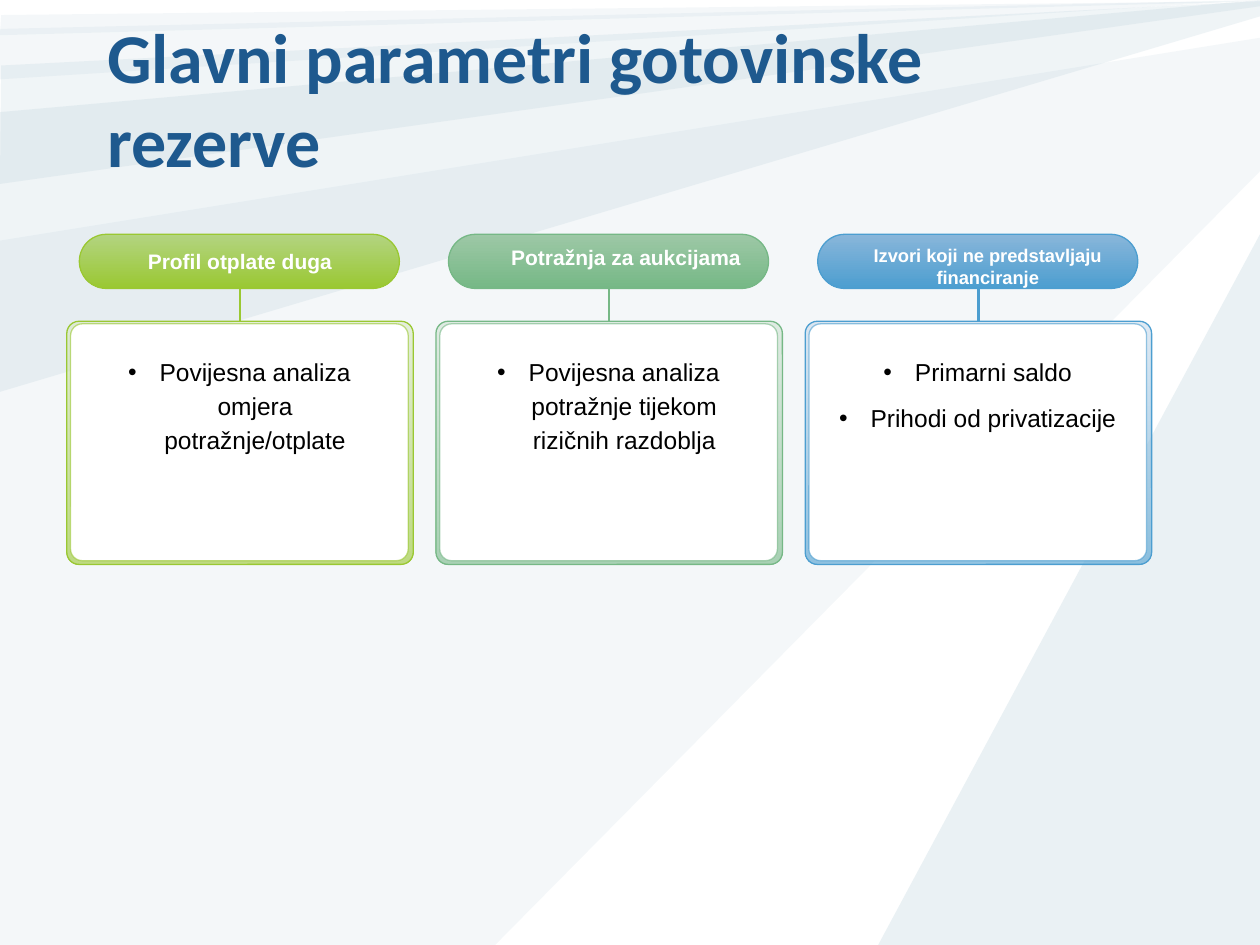
from dataclasses import dataclass

from lxml.etree import SubElement
from pptx import Presentation
from pptx.dml.color import RGBColor
from pptx.enum.shapes import MSO_CONNECTOR as Connector
from pptx.enum.shapes import MSO_SHAPE as Shape
from pptx.enum.text import MSO_ANCHOR as Anchor
from pptx.enum.text import MSO_AUTO_SIZE as AutoSize
from pptx.enum.text import PP_ALIGN as Align
from pptx.oxml.ns import qn
from pptx.util import Inches, Pt


@dataclass(frozen=True)
class Theme:
    title: str = "1E598E"
    ray: str = "97BAC9"
    white: str = "FFFFFF"
    black: str = "000000"
    heading_font: str = "Calibri"
    body_font: str = "Arial"
    title_size: float = 40
    label_size: float = 12
    small_label_size: float = 10.5
    body_size: float = 14
    outline: float = 0.75
    stem: float = 1.5
    veil: int = 60


THEME = Theme()
COLUMNS = 10
TITLE_ONLY = 5

RAYS = [
    (10, [(10, 0.3), (0, 1.91), (0, 7.5), (3.93, 7.5), (10, 1.36)]),
    (20, [(10, 1.86), (6.97, 7.5), (10, 7.5)]),
    (10, [(0.01, 0.12), (0, 0.28), (10, 0.01)]),
    (10, [(9.99, 0), (0, 0.63), (0, 0.23)]),
    (15, [(10, 0.13), (0, 3.11), (0, 0.89), (10, 0)]),
    (14, [(10, 0.01), (0.01, 0.52), (0, 1.46), (10, 0.05)]),
]

CARDS = [
    dict(color="9AC832", panel_tint="DBE9C8", header_tint="B3D481",
         label="Profil otplate duga", label_size=THEME.label_size,
         label_box=(0.29, 1.92, 2.17, 0.3),
         items=["Povijesna analiza omjera potražnje/otplate"]),
    dict(color="76B886", panel_tint="D2E4D5", header_tint="9DC8A6",
         label="Potražnja za aukcijama", label_size=THEME.label_size,
         label_box=(0.43, 1.89, 2.16, 0.3),
         items=["Povijesna analiza potražnje tijekom rizičnih razdoblja"]),
    dict(color="4C9ED0", panel_tint="CBDCEC", header_tint="89B6DA",
         label="Izvori koji ne predstavljaju financiranje",
         label_size=THEME.small_label_size,
         label_box=(0.43, 1.89, 2.04, 0.45),
         items=["Primarni saldo", "Prihodi od privatizacije"]),
]
CARD_LEFT, CARD_PITCH, CARD_WIDTH = 0.53, 2.93, 2.75
HEADER_TOP, HEADER_HEIGHT = 1.86, 0.43
PANEL_TOP, PANEL_HEIGHT = 2.55, 1.93


def apply_format(target, values):
    for name, value in values.items():
        setattr(target, name, value)


def set_opacity(properties, percent):
    for color in properties.iter(qn("a:srgbClr")):
        SubElement(color, qn("a:alpha"), val=str(percent * 1000))


class SlideBuilder:
    def __init__(self, presentation, theme):
        self.theme = theme
        self.cell = presentation.slide_width / COLUMNS
        layout = presentation.slide_layouts[TITLE_ONLY]
        self.slide = presentation.slides.add_slide(layout)
        self.shapes = self.slide.shapes

    def grid(self, *cells):
        return [round(cell * self.cell) for cell in cells]

    def format_font(self, font, name, size, color, bold=False):
        apply_format(font, dict(name=name, size=Pt(size), bold=bold))
        font.color.rgb = RGBColor.from_string(color)

    def ray(self, opacity, points):
        start, *rest = [self.grid(*point) for point in points]
        builder = self.shapes.build_freeform(*start)
        builder.add_line_segments(rest, close=True)
        shape = builder.convert_to_shape()
        shape.shadow.inherit = False
        shape.fill.solid()
        shape.fill.fore_color.rgb = RGBColor.from_string(self.theme.ray)
        set_opacity(shape.fill._xPr, opacity)
        shape.line.fill.background()

    def title(self, text, box):
        title = self.shapes.title
        self.shapes.element.append(title.element)
        names = ("left", "top", "width", "height")
        apply_format(title, dict(zip(names, self.grid(*box))))
        frame = title.text_frame
        frame.text = text
        apply_format(frame, dict(word_wrap=True, auto_size=AutoSize.NONE,
                                 vertical_anchor=Anchor.MIDDLE))
        paragraph = frame.paragraphs[0]
        paragraph.alignment = Align.LEFT
        self.format_font(paragraph.runs[0].font, self.theme.heading_font,
                         self.theme.title_size, self.theme.title, bold=True)

    def rounded(self, box, radius, fills, line, opacity=100, line_opacity=100):
        shape = self.shapes.add_shape(Shape.ROUNDED_RECTANGLE, *self.grid(*box))
        shape.adjustments[0] = radius
        shape.shadow.inherit = False
        if len(fills) == 1:
            shape.fill.solid()
            shape.fill.fore_color.rgb = RGBColor.from_string(fills[0])
        else:
            shape.fill.gradient()
            shape.fill.gradient_angle = 270
            for stop, color in zip(shape.fill.gradient_stops, fills):
                stop.color.rgb = RGBColor.from_string(color)
        if opacity < 100:
            set_opacity(shape.fill._xPr, opacity)
        shape.line.color.rgb = RGBColor.from_string(line)
        shape.line.width = Pt(self.theme.outline)
        if line_opacity < 100:
            set_opacity(shape.line._get_or_add_ln(), line_opacity)

    def text(self, box, lines, size, color, bold=False, bullets=False):
        frame = self.shapes.add_textbox(*self.grid(*box)).text_frame
        apply_format(frame, dict(word_wrap=True,
                                 auto_size=AutoSize.SHAPE_TO_FIT_TEXT))
        for index, line in enumerate(lines):
            paragraph = frame.add_paragraph() if index else frame.paragraphs[0]
            paragraph.alignment = Align.CENTER
            run = paragraph.add_run()
            run.text = line
            self.format_font(run.font, self.theme.body_font, size, color, bold)
            if bullets:
                self.bullet(paragraph, size)

    def bullet(self, paragraph, size):
        apply_format(paragraph, dict(line_spacing=1.15,
                                     space_before=Pt(size / 2)))
        properties = paragraph._p.get_or_add_pPr()
        properties.set("marL", str(Inches(0.25)))
        properties.set("indent", str(-Inches(0.25)))
        SubElement(properties, qn("a:buFont"), typeface=self.theme.body_font)
        SubElement(properties, qn("a:buChar"), char="•")

    def stem(self, x, top, bottom, color):
        line = self.shapes.add_connector(
            Connector.STRAIGHT, *self.grid(x, top, x, bottom))
        line.line.color.rgb = RGBColor.from_string(color)
        line.line.width = Pt(self.theme.stem)
        SubElement(line.element.spPr, qn("a:effectLst"))

    def card(self, left, card):
        theme, color = self.theme, card["color"]
        self.rounded((left, PANEL_TOP, CARD_WIDTH, PANEL_HEIGHT), 0.05,
                     [card["panel_tint"], color], color, opacity=theme.veil)
        self.rounded((left + 0.03, PANEL_TOP + 0.02, 2.68, 1.88), 0.05,
                     [theme.white], color, line_opacity=theme.veil)
        self.rounded((left + 0.1, HEADER_TOP, 2.54, HEADER_HEIGHT), 0.5,
                     [card["header_tint"], color], color)
        offset, *rest = card["label_box"]
        self.text((left + offset, *rest), [card["label"]],
                  card["label_size"], theme.white, bold=True)
        self.text((left + 0.14, 2.75, 2.46, 1), card["items"],
                  theme.body_size, theme.black, bullets=True)
        self.stem(left + CARD_WIDTH / 2, HEADER_TOP + HEADER_HEIGHT,
                  PANEL_TOP, color)


def main():
    presentation = Presentation()
    apply_format(presentation, dict(slide_width=Inches(10),
                                    slide_height=Inches(7.5)))
    builder = SlideBuilder(presentation, THEME)
    for opacity, points in RAYS:
        builder.ray(opacity, points)
    builder.title("Glavni parametri gotovinske rezerve", (0.75, 0.25, 7.42, 1.05))
    for index, card in enumerate(CARDS):
        builder.card(CARD_LEFT + index * CARD_PITCH, card)
    presentation.save("out.pptx")


if __name__ == "__main__":
    main()
